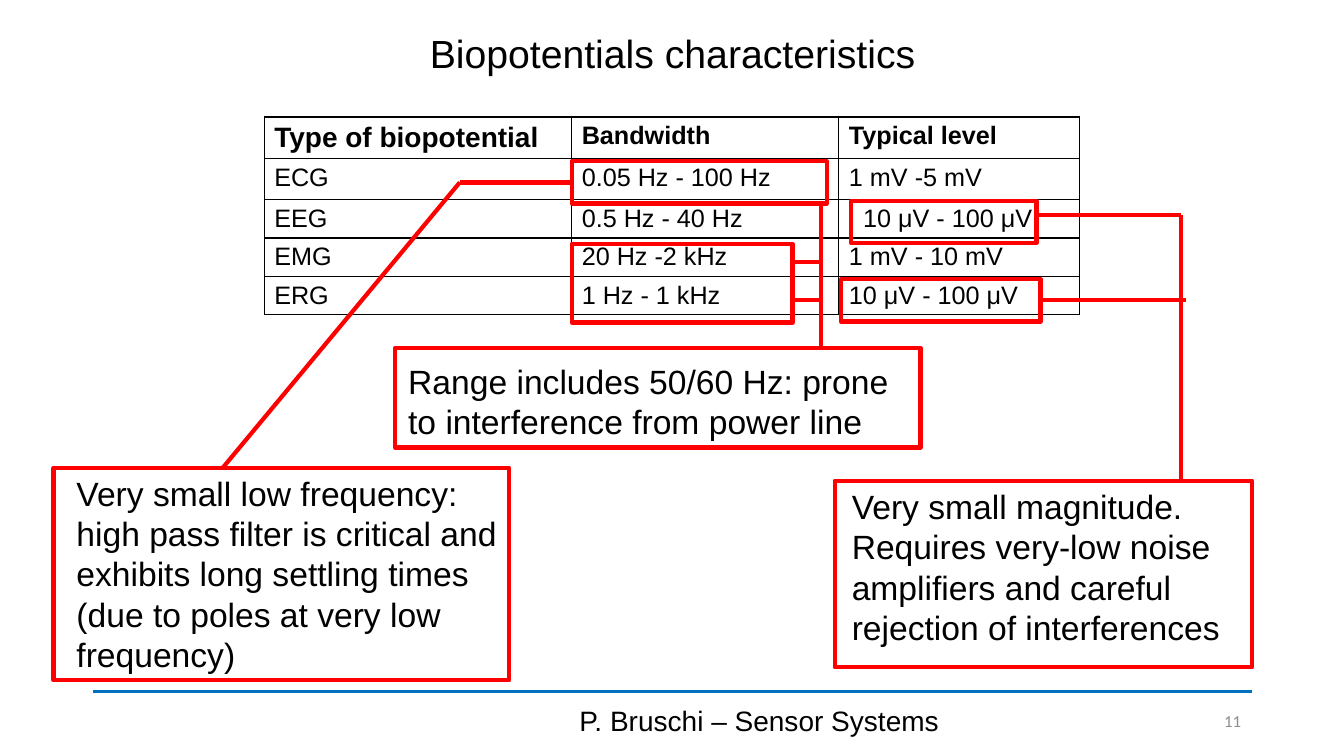
from dataclasses import dataclass
from typing import Any, NamedTuple, Optional

from lxml import etree
from pptx import Presentation
from pptx.dml.color import RGBColor
from pptx.enum.shapes import MSO_CONNECTOR, MSO_SHAPE
from pptx.enum.text import MSO_ANCHOR, MSO_AUTO_SIZE, PP_ALIGN
from pptx.oxml.ns import qn
from pptx.util import Emu, Pt

PX = 9144
STRAIGHT = MSO_CONNECTOR.STRAIGHT
RECTANGLE = MSO_SHAPE.RECTANGLE
TOP, MIDDLE = MSO_ANCHOR.TOP, MSO_ANCHOR.MIDDLE
FIXED, GROW = MSO_AUTO_SIZE.NONE, MSO_AUTO_SIZE.SHAPE_TO_FIT_TEXT
LEFT, CENTER, RIGHT = PP_ALIGN.LEFT, PP_ALIGN.CENTER, PP_ALIGN.RIGHT
LEFT_SITE, RIGHT_SITE = 1, 3
RED, BLUE, BLACK, GRAY = "FF0000", "0070C0", "000000", "8C8C8C"


class Box(NamedTuple):
    left: int
    top: int
    width: int
    height: int


class Segment(NamedTuple):
    x1: int
    y1: int
    x2: int
    y2: int
    source: Optional[str] = None
    site: int = LEFT_SITE


@dataclass
class Label:
    box: Box
    paragraphs: list[str]
    size: int = 24
    align: Any = LEFT
    anchor: Any = TOP
    fit: Any = GROW
    font: str = "Arial"
    color: str = BLACK
    spacing: float = 1.0


LABELS = [
    Label(Box(92, 19, 1150, 72), ["Biopotentials characteristics"], 28,
          CENTER, MIDDLE, FIXED, spacing=0.9),
    Label(Box(442, 695, 622, 40), ["P. Bruschi – Sensor Systems"], 20, CENTER, MIDDLE, FIXED),
    Label(Box(1145, 695, 96, 40), ["11"], 12, RIGHT, MIDDLE, FIXED, "Calibri", GRAY),
    Label(Box(66, 464, 452, 212), [
        "Very small low frequency:",
        "high pass filter is critical and exhibits long settling times "
        "(due to poles at very low frequency)",
    ]),
    Label(Box(835, 477, 414, 172), [
        "Very small magnitude. Requires very-low noise amplifiers and careful "
        "rejection of interferences",
    ]),
    Label(Box(395, 353, 518, 91), [
        "Range includes 50/60 Hz: prone to interference from power line",
    ]),
]

TABLE_BOX = Box(262, 116, 809, 196)
COLUMN_WIDTHS = [305, 265, 239]
ROW_HEIGHTS = [41, 41, 38, 38, 38]
BIOPOTENTIALS = [
    ["Type of biopotential", "Bandwidth", "Typical level"],
    ["ECG", "0.05 Hz - 100 Hz", "1 mV -5 mV"],
    ["EEG", "0.5 Hz - 40 Hz", "10 μV - 100 μV"],
    ["EMG", "20 Hz -2 kHz", "1 mV - 10 mV"],
    ["ERG", "1 Hz - 1 kHz", "10 μV - 100 μV"],
]
EEG_LEVEL = (2, 2)
EEG_LEVEL_MARGIN = 24

FRAMES = {
    "ecg bandwidth": Box(567, 160, 253, 42),
    "eeg level": Box(844, 199, 184, 42),
    "emg and erg bandwidth": Box(567, 242, 219, 78),
    "erg level": Box(834, 277, 198, 42),
    "low frequency note": Box(53, 464, 452, 211),
    "power line note": Box(392, 345, 521, 99),
    "magnitude note": Box(828, 477, 414, 185),
}
LEADERS = [
    Segment(567, 181, 456, 181, "ecg bandwidth", LEFT_SITE),
    Segment(456, 181, 221, 464),
    Segment(814, 201, 814, 345),
    Segment(786, 260, 814, 260),
    Segment(786, 298, 814, 298),
    Segment(1171, 213, 1171, 477),
    Segment(1028, 213, 1171, 213),
    Segment(1032, 298, 1176, 298, "erg level", RIGHT_SITE),
]
FOOTER_RULE = Segment(92, 686, 1242, 686)


def emu(lengths: Any) -> list[Emu]:
    return [Emu(length * PX) for length in lengths]


def paint(color_format: Any, color: str) -> None:
    color_format.rgb = RGBColor.from_string(color)


def apply(target: Any, formats: dict[str, Any]) -> None:
    for attribute, value in formats.items():
        setattr(target, attribute, value)


def stroke(line: Any, color: str, width: float) -> None:
    line.fill.solid()
    paint(line.color, color)
    line.width = Pt(width)


def write(paragraph: Any, text: str, color: str, formats: dict[str, Any]) -> None:
    run = paragraph.add_run()
    run.text = text
    apply(run.font, formats)
    paint(run.font.color, color)


def draw_label(slide: Any, label: Label) -> None:
    frame = slide.shapes.add_textbox(*emu(label.box)).text_frame
    apply(frame, {"word_wrap": True, "auto_size": label.fit, "vertical_anchor": label.anchor})
    for index, text in enumerate(label.paragraphs):
        paragraph = frame.add_paragraph() if index else frame.paragraphs[0]
        apply(paragraph, {"alignment": label.align, "line_spacing": label.spacing})
        write(paragraph, text, label.color, {"size": Pt(label.size), "name": label.font})


def draw_frame(slide: Any, box: Box) -> Any:
    frame = slide.shapes.add_shape(RECTANGLE, *emu(box))
    frame.shadow.inherit = False
    frame.fill.background()
    stroke(frame.line, RED, 3)
    return frame


def draw_segment(slide: Any, segment: Segment, color: str, width: float) -> Any:
    connector = slide.shapes.add_connector(STRAIGHT, *emu(segment[:4]))
    stroke(connector.line, color, width)
    etree.SubElement(connector._element.spPr, qn("a:effectLst"))
    return connector


def add_borders(cell: Any) -> None:
    properties = cell._tc.get_or_add_tcPr()
    for index, side in enumerate(("a:lnL", "a:lnR", "a:lnT", "a:lnB")):
        border = etree.Element(qn(side), w=str(Pt(1)))
        fill = etree.SubElement(border, qn("a:solidFill"))
        etree.SubElement(fill, qn("a:srgbClr"), val=BLACK)
        properties.insert(index, border)


def draw_table(slide: Any) -> None:
    table = slide.shapes.add_table(
        len(ROW_HEIGHTS), len(COLUMN_WIDTHS), *emu(TABLE_BOX)).table
    apply(table, {"first_row": False, "horz_banding": False})
    for column, width in zip(table.columns, emu(COLUMN_WIDTHS)):
        column.width = width
    for row, height in zip(table.rows, emu(ROW_HEIGHTS)):
        row.height = height
    for r, values in enumerate(BIOPOTENTIALS):
        for c, value in enumerate(values):
            cell = table.cell(r, c)
            cell.fill.background()
            add_borders(cell)
            size = 20 if r == c == 0 else 18
            write(cell.text_frame.paragraphs[0], value, BLACK,
                  {"size": Pt(size), "name": "Arial", "bold": r == 0})
    table.cell(*EEG_LEVEL).margin_left = Emu(EEG_LEVEL_MARGIN * PX)


def main() -> None:
    presentation = Presentation()
    apply(presentation, dict(zip(("slide_width", "slide_height"), emu((1333, 750)))))
    slide = presentation.slides.add_slide(presentation.slide_layouts[6])
    draw_segment(slide, FOOTER_RULE, BLUE, 2.75)
    draw_table(slide)
    for label in LABELS:
        draw_label(slide, label)
    frames = {name: draw_frame(slide, box) for name, box in FRAMES.items()}
    for leader in LEADERS:
        connector = draw_segment(slide, leader, RED, 3)
        if leader.source:
            connector.begin_connect(frames[leader.source], leader.site)
    presentation.save("out.pptx")


if __name__ == "__main__":
    main()
